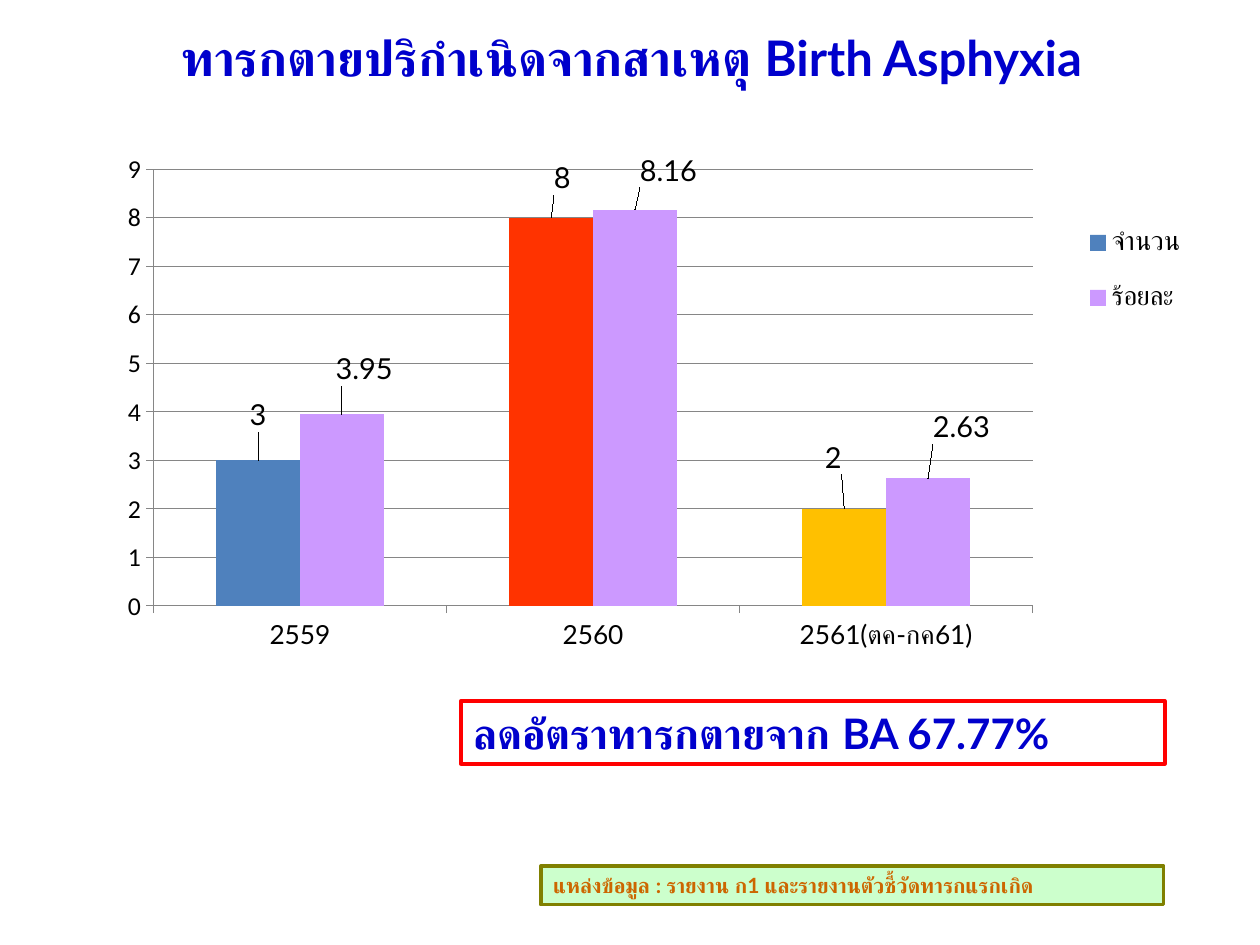
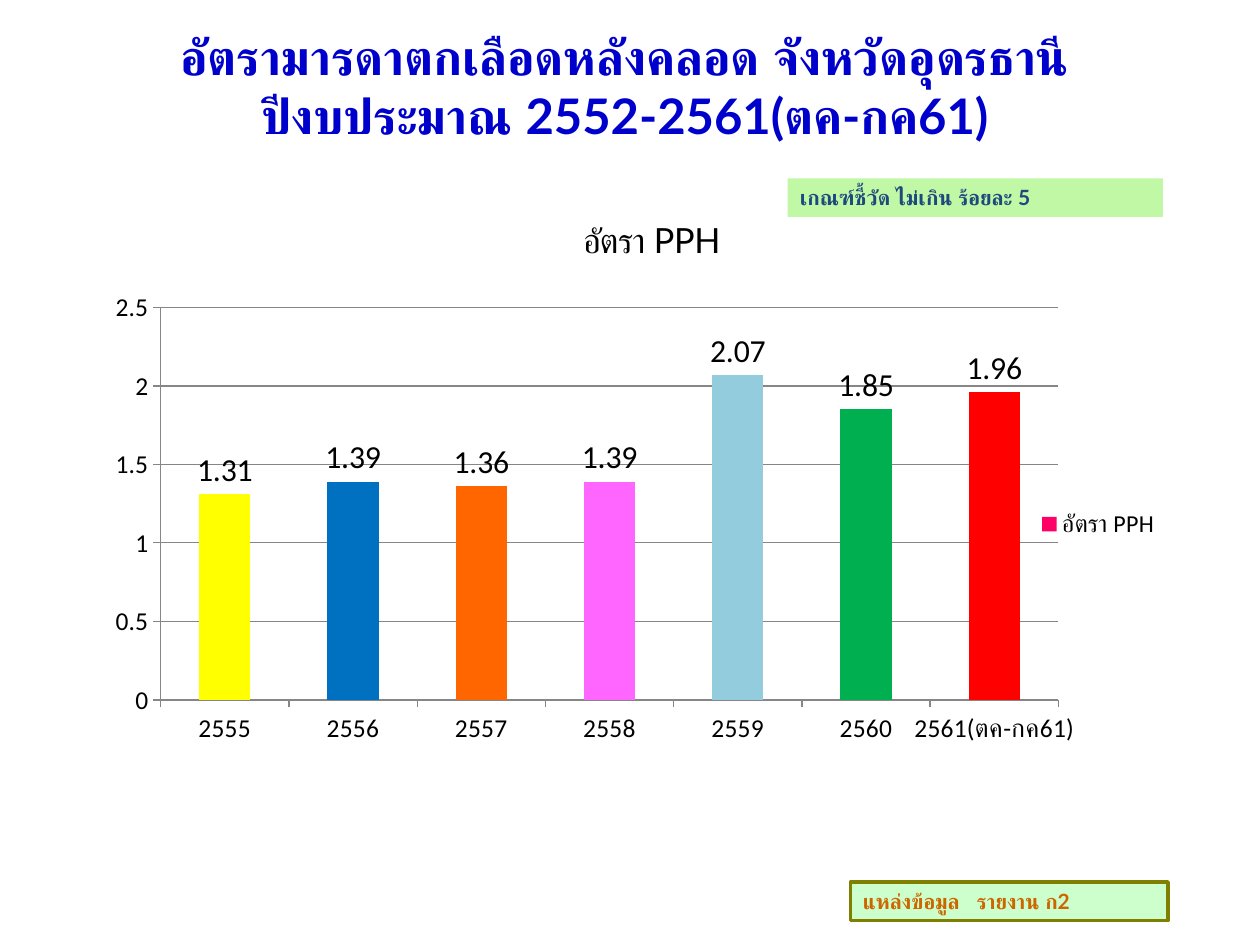
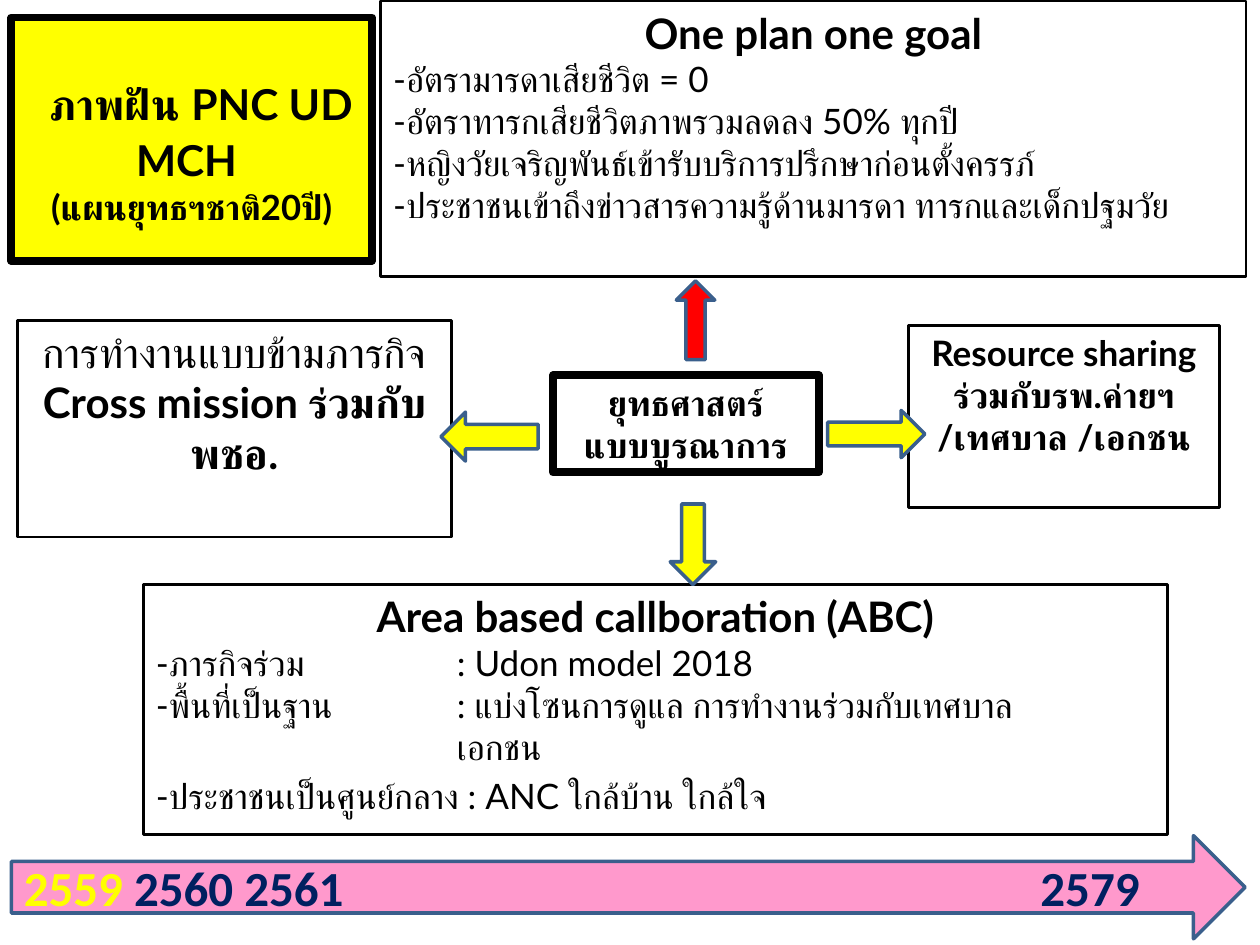
from dataclasses import dataclass

from lxml import etree
from pptx import Presentation
from pptx.chart.data import CategoryChartData
from pptx.dml.color import RGBColor
from pptx.enum import chart as ch, shapes, text
from pptx.oxml.ns import qn
from pptx.util import Pt


@dataclass(frozen=True)
class Theme:
    font: str = "Lato"
    axis_font: str = "Calibri"
    ink: str = "000000"
    blue: str = "0000CC"
    navy: str = "002060"
    yellow: str = "FFFF00"
    red: str = "FF0000"
    grid: str = "868686"
    arrow_line: str = "3A5F8C"
    title: float = 28
    heading: float = 24
    body: float = 20
    note: float = 12
    axis: float = 14.7


T = Theme()
LEFT, CENTER = text.PP_ALIGN.LEFT, text.PP_ALIGN.CENTER
TOP, MIDDLE = text.MSO_ANCHOR.TOP, text.MSO_ANCHOR.MIDDLE
BOX = shapes.MSO_SHAPE.RECTANGLE

# Text styles: size, bold, colour, font
TITLE = (T.title, True, T.blue, T.font)
CALLOUT = (T.heading, True, T.blue, T.font)
SOURCE = (T.note, True, "CC6600", T.font)
CRITERION = (T.note, True, "1F497D", T.font)
HEADING = (T.heading, True, T.ink, T.font)
LEAD = (T.heading, False, T.ink, T.font)
STRONG = (T.body, True, T.ink, T.font)
BODY = (T.body, False, T.ink, T.font)
YEAR_NOW = (T.title, True, T.yellow, T.axis_font)
YEAR = (T.title, True, T.navy, T.axis_font)

# Box looks: fill, line colour, line width
SOURCE_LOOK = ("CCFFCC", "808000", 2)
CALLOUT_LOOK = (None, T.red, 2.25)
CRITERION_LOOK = ("C1F8A6", None, 0)
FRAME = (None, T.ink, 1.5)
HEAVY = (None, T.ink, 4.5)
DREAM_LOOK = (T.yellow, T.ink, 4.5)

# Boxes: place, look, alignment of each paragraph with its runs
CHART_SLIDES = [
    dict(
        title="ทารกตายปริกำเนิดจากสาเหตุ Birth Asphyxia",
        title_at=(21, 12, 680, 41),
        chart=dict(
            at=(54, 72, 636, 330),
            plot=(.053, .075, .79, .756), legend=(.875, .13, .12, .24),
            years=["2559", "2560", "2561(ตค-กค61)"],
            series=[
                dict(name="จำนวน", values=[3, 8, 2], color="4F81BD",
                     bars={1: "FF3300", 2: "FFC000"},
                     label_shifts=[(0, -.04), (.01, -.03), (-.01, -.05)]),
                dict(name="ร้อยละ", values=[3.95, 8.16, 2.63], color="CC99FF",
                     bars={},
                     label_shifts=[(.02, -.04), (.03, -.03), (.03, -.05)]),
            ],
            year_size=15, year_font=T.font, legend_size=15.2,
            label=(16.5, False, T.ink, T.font), format="0", heading=False),
        boxes=[
            ((309, 495, 356, 22), SOURCE_LOOK,
             [(LEFT, [("แหล่งข้อมูล : รายงาน ก1 และรายงานตัวชี้วัดทารกแรกเกิด", SOURCE)])]),
            ((263.5, 400.5, 402, 36), CALLOUT_LOOK,
             [(LEFT, [("ลดอัตราทารกตายจาก BA 67.77%", CALLOUT)])]),
        ]),
    dict(
        title="อัตรามารดาตกเลือดหลังคลอด จังหวัดอุดรธานี ปีงบประมาณ 2552-2561(ตค-กค61)",
        title_at=(34, 11.5, 646, 75),
        chart=dict(
            at=(66, 108, 606, 372),
            plot=(.032, .182, .856, .603), legend=(.866, .48, .12, .07),
            years=["2555", "2556", "2557", "2558", "2559", "2560", "2561(ตค-กค61)"],
            series=[
                dict(name="อัตรา PPH", color="FF0066",
                     values=[1.31, 1.39, 1.36, 1.39, 2.07, 1.85, 1.96],
                     bars=dict(enumerate(["FFFF00", "0070C0", "FF6600", "FF66FF",
                                          "93CDDD", "00B050", "FF0000"])),
                     label_shifts=[]),
            ],
            year_size=T.axis, year_font=T.axis_font, legend_size=13.9,
            label=(18.3, False, T.ink, T.axis_font), format="General", heading=True),
        boxes=[
            ((486, 504, 181.5, 22), SOURCE_LOOK,
             [(LEFT, [("แหล่งข้อมูล\tรายงาน ก2", SOURCE)])], 65),
            ((450, 102, 214.5, 22), CRITERION_LOOK,
             [(LEFT, [("เกณฑ์ชี้วัด ไม่เกิน ร้อยละ 5", CRITERION)])]),
        ]),
]

DREAM_AT = (6.5, 10, 206, 139)
DREAM = [(CENTER, [(" ", (39.6, True, T.ink, T.axis_font)),
                   ("ภาพฝัน PNC UD MCH ", (24.3, True, T.ink, T.font)),
                   ("\v", None),
                   ("(แผนยุทธฯชาติ20ปี)", (19.8, True, T.ink, T.font))])]
STRATEGY_BOXES = [
    ((10, 183, 248, 124), FRAME,
     [(CENTER, [("การทำงานแบบข้ามภารกิจ", LEAD)]),
      (CENTER, [("Cross mission ร่วมกับ พชอ.", HEADING)])]),
    ((316, 214.5, 152, 55.5), HEAVY,
     [(CENTER, [("ยุทธศาสตร์", STRONG)]),
      (CENTER, [("แบบบูรณาการ", STRONG)])]),
    ((217.5, .5, 494.5, 157.5), FRAME,
     [(CENTER, [("One plan one goal", HEADING)])]
     + [(LEFT, [(goal, BODY)]) for goal in (
         "-อัตรามารดาเสียชีวิต = 0",
         "-อัตราทารกเสียชีวิตภาพรวมลดลง 50% ทุกปี",
         "-หญิงวัยเจริญพันธ์เข้ารับบริการปรึกษาก่อนตั้งครรภ์",
         "-ประชาชนเข้าถึงข่าวสารความรู้ด้านมารดา ทารกและเด็กปฐมวัย")]),
    ((519, 186, 178, 104), FRAME,
     [(CENTER, [("Resource sharing", STRONG)]),
      (CENTER, [("ร่วมกับรพ.ค่ายฯ /เทศบาล /เอกชน", STRONG)])]),
    ((82, 334, 585, 143), FRAME,
     [(CENTER, [("Area based callboration (ABC)", HEADING)])]
     + [(LEFT, [(line, BODY)]) for line in (
         "-ภารกิจร่วม\t: Udon model 2018",
         "-พื้นที่เป็นฐาน\t: แบ่งโซนการดูแล การทำงานร่วมกับเทศบาล",
         "\tเอกชน")]
     + [(LEFT, [("-ประชาชนเป็นศูนย์กลาง : ANC ใกล้บ้าน ใกล้ใจ", BODY),
                (" ", LEAD)])], 172),
]
ARROWS = [
    (shapes.MSO_SHAPE.UP_ARROW, (386.5, 160.5, 22, 45), T.red),
    (shapes.MSO_SHAPE.DOWN_ARROW, (383, 288, 26, 46), T.yellow),
    (shapes.MSO_SHAPE.LEFT_ARROW, (252, 235.5, 55.5, 28), T.yellow),
    (shapes.MSO_SHAPE.RIGHT_ARROW, (473, 234.5, 55.5, 27), T.yellow),
]
TIMELINE_AT = (6.5, 477.5, 705, 59)
TIMELINE = [(LEFT, [("2559", YEAR_NOW), (" 2560 2561\t2579", YEAR)])]
TIMELINE_TAB = 581


def rgb(color):
    return RGBColor.from_string(color)


def points(place):
    return [Pt(value) for value in place]


def style(font, size, bold, color, name):
    font.size, font.bold, font.name = Pt(size), bold, name
    font.color.rgb = rgb(color)


def write(shape, paragraphs, anchor=TOP, tab=None):
    frame = shape.text_frame
    frame.word_wrap = True
    frame.auto_size = text.MSO_AUTO_SIZE.NONE
    frame.vertical_anchor = anchor
    for i, (align, runs) in enumerate(paragraphs):
        para = frame.paragraphs[0] if i == 0 else frame.add_paragraph()
        para.alignment = align
        for words, look in runs:
            if look is None:
                para.add_line_break()
                continue
            run = para.add_run()
            run.text = words
            style(run.font, *look)
        if tab:
            stops = etree.SubElement(para._p.get_or_add_pPr(), qn("a:tabLst"))
            etree.SubElement(stops, qn("a:tab"), pos=str(Pt(tab)), algn="l")


def paint(shape, fill, line, width):
    if fill:
        shape.fill.solid()
        shape.fill.fore_color.rgb = rgb(fill)
    else:
        shape.fill.background()
    if line:
        shape.line.color.rgb = rgb(line)
        shape.line.width = Pt(width)
    else:
        shape.line.fill.background()


def add_block(slide, place, look, paragraphs=(), tab=None, kind=BOX, anchor=TOP):
    block = slide.shapes.add_shape(kind, *points(place))
    block.shadow.inherit = False
    paint(block, *look)
    write(block, paragraphs, anchor, tab)


def set_title(slide, place, paragraphs, anchor=TOP):
    title = slide.shapes.title
    title.left, title.top, title.width, title.height = points(place)
    write(title, paragraphs, anchor)
    return title


def set_layout(element, index, **values):
    """Give a chart part a manual layout, placed as its child number index."""
    for old in element.findall(qn("c:layout")):
        element.remove(old)
    layout = etree.Element(qn("c:layout"))
    manual = etree.SubElement(layout, qn("c:manualLayout"))
    for key, value in values.items():
        etree.SubElement(manual, qn("c:" + key), val=str(value))
    element.insert(index, layout)


def set_frame(element, index, place, **target):
    x, y, w, h = place
    set_layout(element, index, **target, xMode="edge", yMode="edge", x=x, y=y, w=w, h=h)


def add_series_look(series, part, label):
    series.format.fill.solid()
    series.format.fill.fore_color.rgb = rgb(part["color"])
    for i, color in part["bars"].items():
        fill = series.points[i].format.fill
        fill.solid()
        fill.fore_color.rgb = rgb(color)
    labels = series.data_labels
    labels.show_value = True
    labels.position = ch.XL_LABEL_POSITION.OUTSIDE_END
    style(labels.font, *label)
    for i, _ in enumerate(part["label_shifts"]):
        point_label = series.points[i].data_label
        point_label.position = ch.XL_LABEL_POSITION.OUTSIDE_END
        style(point_label.font, *label)
    shifted = series._element.iter(qn("c:dLbl"))
    for element, (x, y) in zip(shifted, part["label_shifts"]):
        set_layout(element, 1, x=x, y=y)


def add_bars(slide, part):
    data = CategoryChartData()
    data.categories = part["years"]
    for series in part["series"]:
        data.add_series(series["name"], series["values"])
    chart = slide.shapes.add_chart(
        ch.XL_CHART_TYPE.COLUMN_CLUSTERED, *points(part["at"]), data).chart
    style(chart.font, *part["label"])

    chart.has_title = part["heading"]
    if part["heading"]:
        frame = chart.chart_title.text_frame
        frame.text = part["series"][0]["name"]
        style(frame.paragraphs[0].runs[0].font, 19.8, False, T.ink, T.font)

    plot = chart.plots[0]
    plot.gap_width, plot.overlap, plot.vary_by_categories = 150, 0, False
    for series, look in zip(plot.series, part["series"]):
        add_series_look(series, look, part["label"])

    years, scale = chart.category_axis, chart.value_axis
    style(years.tick_labels.font, part["year_size"], False, T.ink, part["year_font"])
    style(scale.tick_labels.font, T.axis, False, T.ink, T.axis_font)
    scale.tick_labels.number_format = part["format"]
    scale.tick_labels.number_format_is_linked = False
    scale.has_major_gridlines = True
    for line in (years.format.line, scale.format.line, scale.major_gridlines.format.line):
        line.color.rgb = rgb(T.grid)
        line.width = Pt(.75)
    for axis in (years, scale):
        axis.major_tick_mark = ch.XL_TICK_MARK.OUTSIDE

    chart.has_legend = True
    legend = chart.legend
    legend.position = ch.XL_LEGEND_POSITION.RIGHT
    legend.include_in_layout = False
    style(legend.font, part["legend_size"], False, T.ink, T.axis_font)
    set_frame(legend._element, 1, part["legend"])
    set_frame(chart._chartSpace.find(".//" + qn("c:plotArea")), 0, part["plot"],
              layoutTarget="inner")


def main():
    deck = Presentation()
    deck.slide_width, deck.slide_height = Pt(720), Pt(540)
    title_only = deck.slide_layouts[5]

    for part in CHART_SLIDES:
        slide = deck.slides.add_slide(title_only)
        set_title(slide, part["title_at"], [(CENTER, [(part["title"], TITLE)])])
        add_bars(slide, part["chart"])
        for box in part["boxes"]:
            add_block(slide, *box)

    strategy = deck.slides.add_slide(title_only)
    paint(set_title(strategy, DREAM_AT, DREAM, MIDDLE), *DREAM_LOOK)
    for box in STRATEGY_BOXES:
        add_block(strategy, *box)
    for kind, place, fill in ARROWS:
        add_block(strategy, place, (fill, T.arrow_line, 2), kind=kind)
    add_block(strategy, TIMELINE_AT, ("FF99CC", T.arrow_line, 2), TIMELINE,
              TIMELINE_TAB, shapes.MSO_SHAPE.RIGHT_ARROW, MIDDLE)

    deck.save("out.pptx")


if __name__ == "__main__":
    main()
